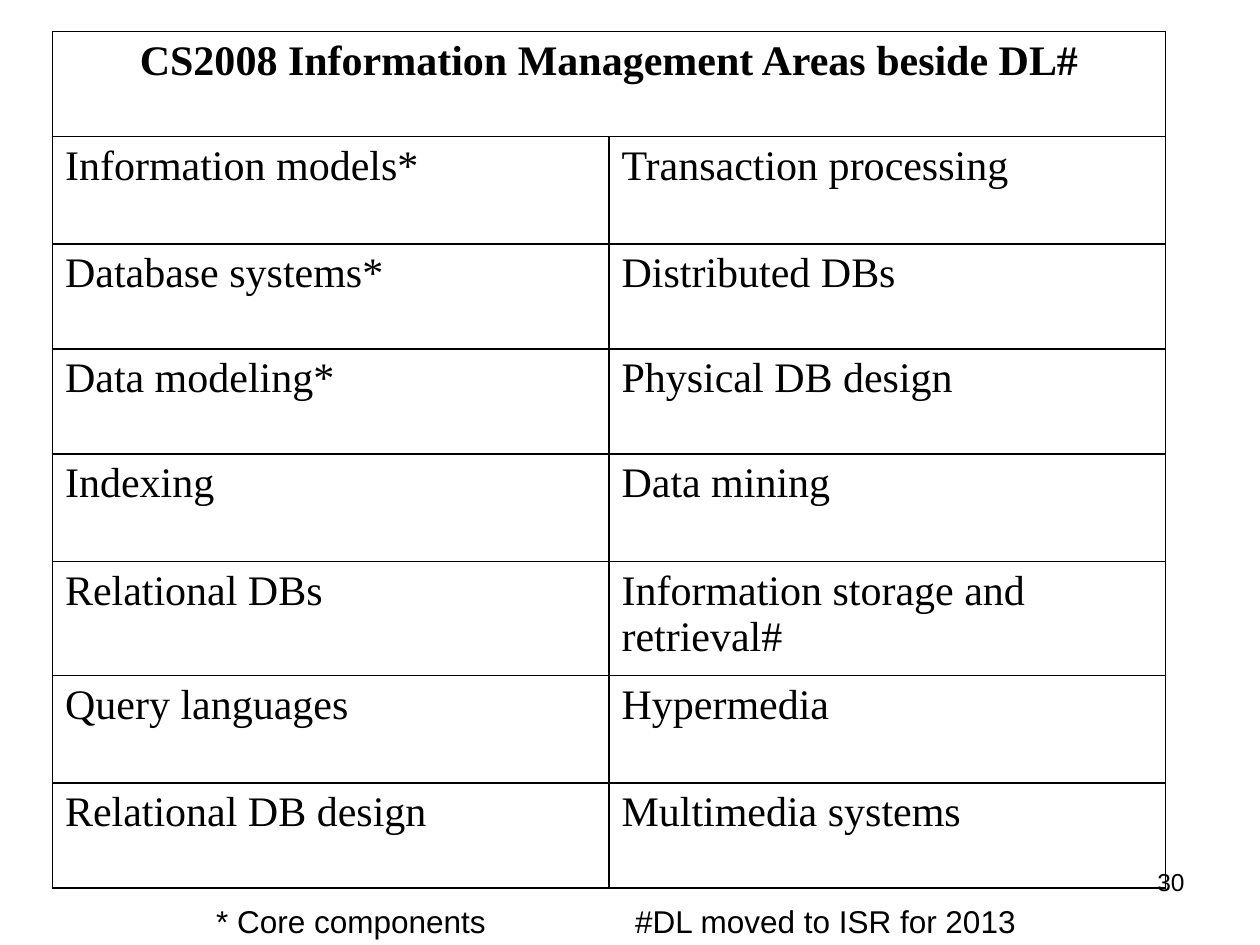
"""Build a slide tabulating the CS2008 information management areas."""
import pptx
import pptx.dml.color
import pptx.enum.text
import pptx.oxml
import pptx.oxml.ns
import pptx.util
from lxml import etree

Pt = pptx.util.Pt
ALIGN = pptx.enum.text.PP_ALIGN
ANCHOR = pptx.enum.text.MSO_ANCHOR

HEADING = "CS2008 Information Management Areas beside DL#"
AREAS = [
    ("Information models*", "Transaction processing"),
    ("Database systems*", "Distributed DBs"),
    ("Data modeling*", "Physical DB design"),
    ("Indexing", "Data mining"),
    ("Relational DBs", "Information storage and retrieval#"),
    ("Query languages", "Hypermedia"),
    ("Relational DB design", "Multimedia systems"),
]
ROW_HEIGHTS = [60, 61.5, 60, 60, 61.5, 65, 61.5, 60]


def color(hex_string):
    return pptx.dml.color.RGBColor.from_string(hex_string)


def write(frame, text, font="Arial", size=18, bold=False, align=ALIGN.LEFT, ink="000000"):
    paragraph = frame.paragraphs[0]
    paragraph.alignment = align
    run = paragraph.add_run()
    run.text = text
    run.font.name = font
    run.font.size = Pt(size)
    run.font.bold = bold
    run.font.color.rgb = color(ink)
    return paragraph


class SlideBuilder:
    def __init__(self, slide, ink="000000", outer=1, inner=0.75):
        self.slide, self.ink = slide, ink
        self.outer, self.inner = outer, inner

    def label(self, box, text, anchor=ANCHOR.TOP, inset=7.2, tab=None, **style):
        frame = self.slide.shapes.add_textbox(*map(Pt, box)).text_frame
        frame.word_wrap = True
        frame.vertical_anchor = anchor
        frame.margin_left = Pt(inset)
        paragraph = write(frame, text, ink=self.ink, **style)
        if tab:
            properties = paragraph._p.get_or_add_pPr()
            stops = etree.SubElement(properties, pptx.oxml.ns.qn("a:tabLst"))
            etree.SubElement(stops, pptx.oxml.ns.qn("a:tab"), pos=str(Pt(tab)), algn="l")

    def border(self, cell, side, width):
        cell._tc.get_or_add_tcPr().append(pptx.oxml.parse_xml(
            f'<a:ln{side} {pptx.oxml.ns.nsdecls("a")} w="{Pt(width)}"><a:solidFill>'
            f'<a:srgbClr val="{self.ink}"/></a:solidFill></a:ln{side}>'))

    def area_table(self, left, top, column_width, heights, heading, areas):
        rows = len(heights)
        table = self.slide.shapes.add_table(
            rows, 2, Pt(left), Pt(top), Pt(2 * column_width), Pt(sum(heights))).table
        table.first_row = table.horz_banding = False
        for column in table.columns:
            column.width = Pt(column_width)
        for row, height in zip(table.rows, heights):
            row.height = Pt(height)
        for r in range(rows):
            for c in range(2):
                cell = table.cell(r, c)
                on_edge = {"L": c == 0, "R": c == 1 or r == 0,
                           "T": r <= 1, "B": r in (0, rows - 1)}
                for side, is_outer in on_edge.items():
                    self.border(cell, side, self.outer if is_outer else self.inner)
                cell.fill.background()
        table.cell(0, 0).merge(table.cell(0, 1))
        write(table.cell(0, 0).text_frame, heading, font="Times New Roman", size=24,
              bold=True, align=ALIGN.CENTER, ink=self.ink)
        for r, pair in enumerate(areas, start=1):
            for c, area in enumerate(pair):
                write(table.cell(r, c).text_frame, area, font="Times New Roman",
                      size=24, ink=self.ink)


def main():
    deck = pptx.Presentation()
    deck.slide_width, deck.slide_height = Pt(720), Pt(540)
    builder = SlideBuilder(deck.slides.add_slide(deck.slide_layouts[6]))
    builder.label((516, 492, 168, 37.5), "30", size=14, align=ALIGN.RIGHT)
    builder.area_table(30, 18, 318, ROW_HEIGHTS, HEADING, AREAS)
    builder.label((24, 511.5, 656, 29), "* Core components\t#DL moved to ISR for 2013",
                  anchor=ANCHOR.MIDDLE, inset=99.5, tab=239.5)
    deck.save("out.pptx")


if __name__ == "__main__":
    main()
